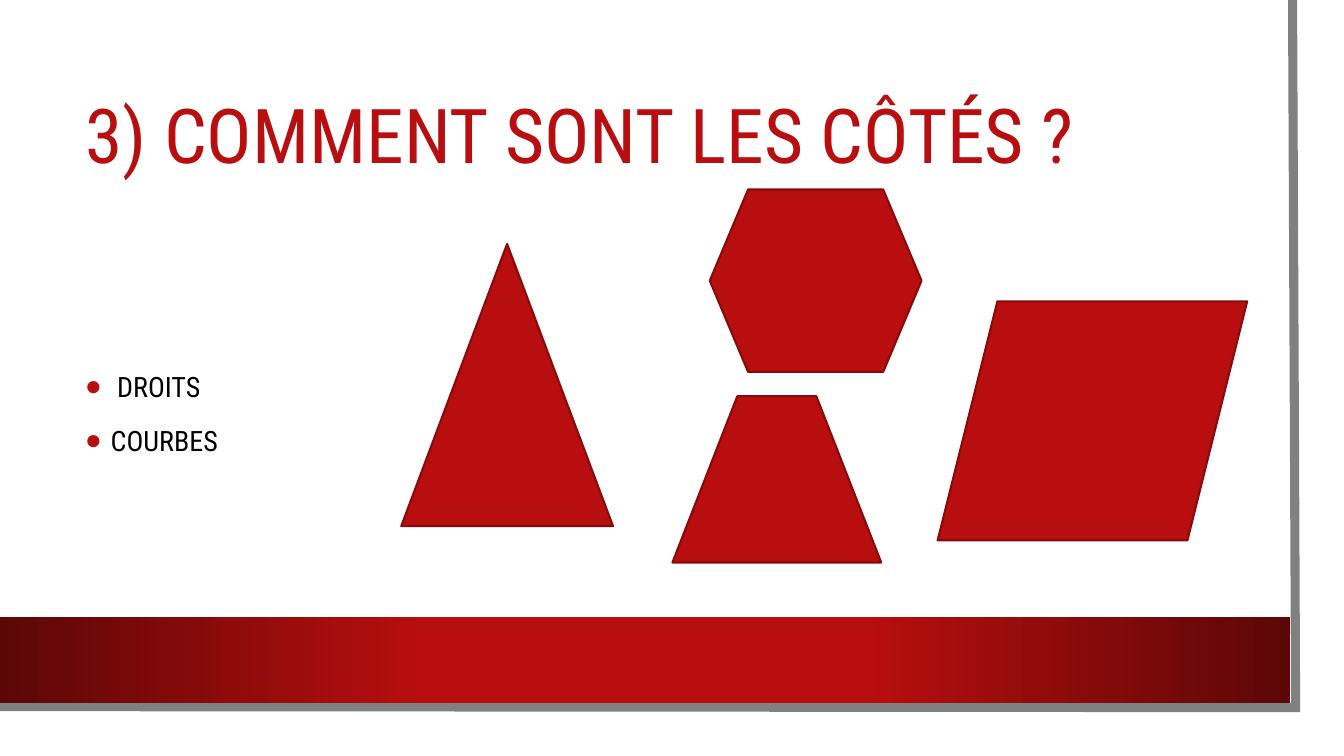
from lxml import etree
from pptx import Presentation
from pptx.dml.color import RGBColor
from pptx.enum import shapes, text
from pptx.oxml import ns
from pptx.util import Inches, Pt

FONT = "Roboto Condensed"
COLORS = {"red": "B80E0F", "outline": "880A0B", "dark": "5C0707",
          "frame": "808080", "black": "000000"}

TITLE = "3) COMMENT SONT LES CÔTÉS ?"
ANSWERS = [" DROITS", "COURBES"]
TITLE_BOX = (0.75, 0.75, 11.37, 1.26)
ANSWERS_BOX = (0.75, 2.26, 11.37, 3.62)
FRAME = [(12.82, 0), (12.85, 7.02), (-0.03, 7.01)]
BAND = (0, 6.12, 12.8, 0.85)
BAND_STOPS = [(0, "dark"), (33, "red"), (67, "red"), (100, "dark")]

# preset name, (left, top, width, height), first adjustment
POLYGONS = [
    ("PARALLELOGRAM", (9.3, 2.99, 3.07, 2.37), 0.25),
    ("HEXAGON", (7.04, 1.88, 2.1, 1.81), 0.21),
    ("TRAPEZOID", (6.67, 3.93, 2.07, 1.65), 0.39),
    ("ISOSCELES_TRIANGLE", (3.98, 2.42, 2.1, 2.8), 0.5),
]


def rgb(name):
    return RGBColor.from_string(COLORS[name])


def add_xml(parent, tag, **attrs):
    return etree.SubElement(parent, ns.qn(tag), attrs)


def add_preset(s, name, box):
    sp = s.shapes.add_shape(shapes.MSO_SHAPE[name], *map(Inches, box))
    sp.shadow.inherit = False
    return sp


def add_frame(s):
    points = [(Inches(x), Inches(y)) for x, y in FRAME]
    builder = s.shapes.build_freeform(*points[0])
    builder.add_line_segments(points[1:], close=False)
    sp = builder.convert_to_shape()
    sp.shadow.inherit = False
    sp.fill.background()
    sp.line.color.rgb = rgb("frame")
    sp.line.width = Pt(6.5)
    add_xml(sp.line._get_or_add_ln(), "a:miter", lim="800000")


def add_band(s):
    sp = add_preset(s, "RECTANGLE", BAND)
    sp.line.fill.background()
    sp.fill.gradient()
    sp.fill.gradient_angle = 0
    stops = sp._element.spPr.find(ns.qn("a:gradFill")).find(ns.qn("a:gsLst"))
    for old in list(stops):
        stops.remove(old)
    for percent, name in BAND_STOPS:
        stop = add_xml(stops, "a:gs", pos=str(percent * 1000))
        add_xml(stop, "a:srgbClr", val=COLORS[name])


def add_bullet(p):
    pPr = p._p.get_or_add_pPr()
    indent = Inches(0.25)
    pPr.set("marL", str(indent))
    pPr.set("indent", str(-indent))
    add_xml(add_xml(pPr, "a:buClr"), "a:srgbClr", val=COLORS["red"])
    add_xml(pPr, "a:buSzPct", val="160000")
    add_xml(pPr, "a:buFont", typeface="Arial")
    add_xml(pPr, "a:buChar", char="•")


def add_text(s, box, lines, size, color, spacing, bullets=False):
    tf = s.shapes.add_textbox(*map(Inches, box)).text_frame
    tf.word_wrap = True
    tf.vertical_anchor = text.MSO_ANCHOR.MIDDLE
    tf.text = "\n".join(lines)
    for i, p in enumerate(tf.paragraphs):
        if bullets:
            add_bullet(p)
        p.line_spacing = spacing
        if i:
            p.space_before = Pt(10)
        for r in p.runs:
            r.font.name = FONT
            r.font.size = Pt(size)
            r.font.color.rgb = rgb(color)


def main():
    prs = Presentation()
    prs.slide_width, prs.slide_height = Inches(13.33), Inches(7.5)
    s = prs.slides.add_slide(prs.slide_layouts[6])
    add_frame(s)
    add_band(s)
    add_text(s, TITLE_BOX, [TITLE], 54, "red", 0.9)
    add_text(s, ANSWERS_BOX, ANSWERS, 20, "black", 1.2, bullets=True)
    for name, box, adjustment in POLYGONS:
        sp = add_preset(s, name, box)
        sp.adjustments[0] = adjustment
        sp.fill.solid()
        sp.fill.fore_color.rgb = rgb("red")
        sp.line.color.rgb = rgb("outline")
        sp.line.width = Pt(1.5)
    prs.save("out.pptx")


if __name__ == "__main__":
    main()
